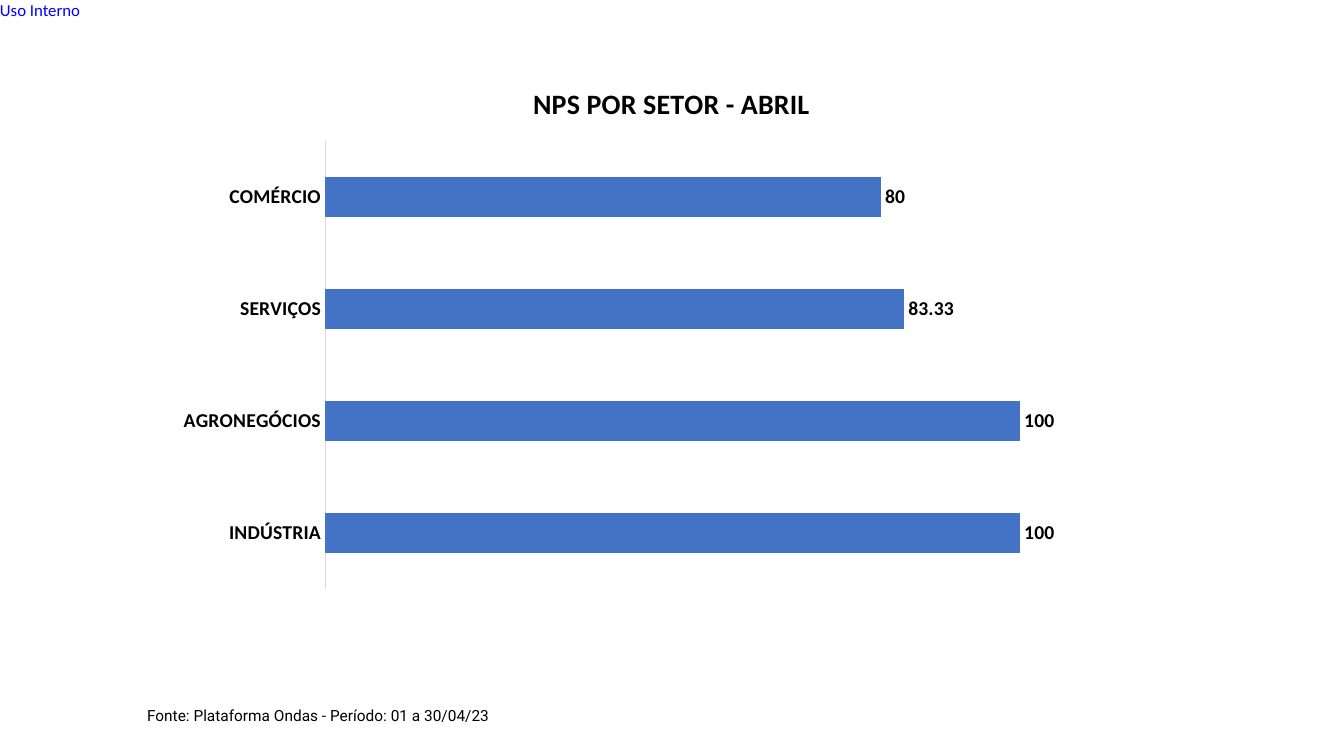
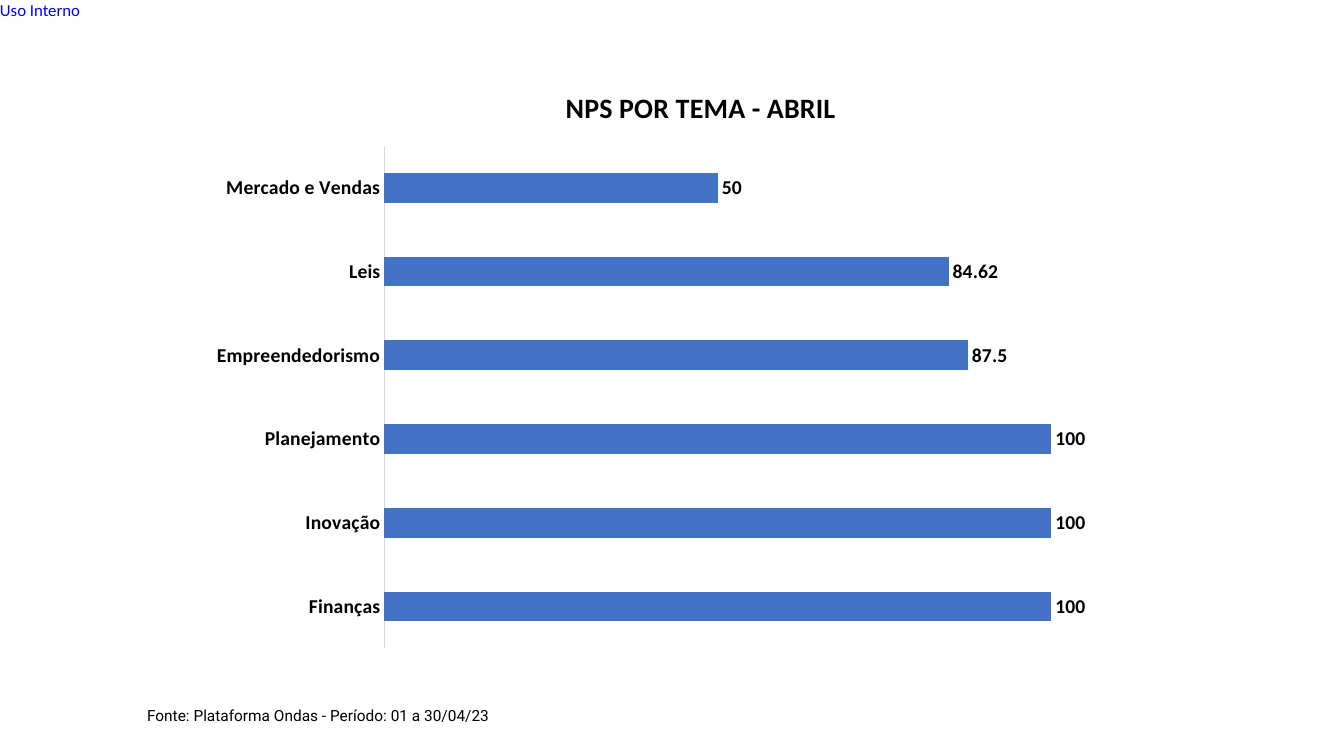
from pptx import Presentation
from pptx.chart.data import CategoryChartData
from pptx.dml.color import RGBColor
from pptx.enum.chart import XL_CHART_TYPE, XL_LABEL_POSITION, XL_TICK_MARK
from pptx.util import Inches, Pt

BAR = XL_CHART_TYPE.BAR_CLUSTERED
OUTSIDE_END = XL_LABEL_POSITION.OUTSIDE_END
NO_TICK = XL_TICK_MARK.NONE


class Theme:
    text = RGBColor(0x00, 0x00, 0x00)
    stamp = RGBColor(0x00, 0x00, 0xFF)
    bar = RGBColor(0x44, 0x72, 0xC4)
    axis = RGBColor(0xD9, 0xD9, 0xD9)
    font, source_font = "Calibri", "Roboto"
    title_size, label_size, base_size = Pt(20), Pt(14), Pt(10)
    stamp_size, source_size = Pt(12), Pt(11)


def style(font, size, color=Theme.text, name=Theme.font, bold=False):
    font.size, font.name, font.bold = size, name, bold
    font.color.rgb = color


def add_text(slide, box, text, size, color, name, margins=True):
    tb = slide.shapes.add_textbox(*map(Inches, box))
    tf = tb.text_frame
    tf.word_wrap = margins
    if not margins:
        tf.margin_left = tf.margin_top = tf.margin_right = tf.margin_bottom = 0
    p = tf.paragraphs[0]
    p.text = text
    style(p.font, size, color, name)


STAMP_BOX = (0, 0, 0.84, 0.2)
SOURCE_BOX = (1.36, 6.96, 4.51, 0.29)

# Title, chart box (left, top, width, height), scores from bottom to top
CHARTS = [
    ("NPS POR SETOR - ABRIL", (1.62, 0.62, 10.08, 5.33),
     {"INDÚSTRIA": 100, "AGRONEGÓCIOS": 100, "SERVIÇOS": 83.33, "COMÉRCIO": 80}),
    ("NPS POR TEMA - ABRIL", (1.95, 0.65, 10, 5.9),
     {"Finanças": 100, "Inovação": 100, "Planejamento": 100,
      "Empreendedorismo": 87.5, "Leis": 84.62, "Mercado e Vendas": 50}),
]

prs = Presentation()
prs.slide_width, prs.slide_height = Inches(13.33), Inches(7.5)
blank = prs.slide_layouts[6]

for title, box, scores in CHARTS:
    slide = prs.slides.add_slide(blank)
    add_text(slide, STAMP_BOX, "Uso Interno", Theme.stamp_size, Theme.stamp,
             Theme.font, margins=False)

    data = CategoryChartData()
    data.categories = list(scores)
    data.add_series("NPS", list(scores.values()))
    chart = slide.shapes.add_chart(BAR, *map(Inches, box), data).chart
    style(chart.font, Theme.base_size)
    chart.has_legend = False

    chart.has_title = True
    p = chart.chart_title.text_frame.paragraphs[0]
    p.text = title
    style(p.font, Theme.title_size, bold=True)
    chart.chart_title.include_in_layout = False

    categories = chart.category_axis
    categories.major_tick_mark = categories.minor_tick_mark = NO_TICK
    categories.format.line.color.rgb = Theme.axis
    categories.format.line.width = Pt(0.75)
    style(categories.tick_labels.font, Theme.label_size, bold=True)

    values = chart.value_axis
    values.minimum_scale, values.maximum_scale = 0, 120
    values.has_major_gridlines = False
    values.visible = False

    plot = chart.plots[0]
    plot.gap_width = 182
    plot.vary_by_categories = False
    plot.series[0].format.fill.solid()
    plot.series[0].format.fill.fore_color.rgb = Theme.bar
    plot.has_data_labels = True
    labels = plot.data_labels
    labels.show_value = True
    labels.position = OUTSIDE_END
    style(labels.font, Theme.label_size, bold=True)

    add_text(slide, SOURCE_BOX, "Fonte: Plataforma Ondas - Período: 01 a 30/04/23",
             Theme.source_size, Theme.text, Theme.source_font)

prs.save("out.pptx")
